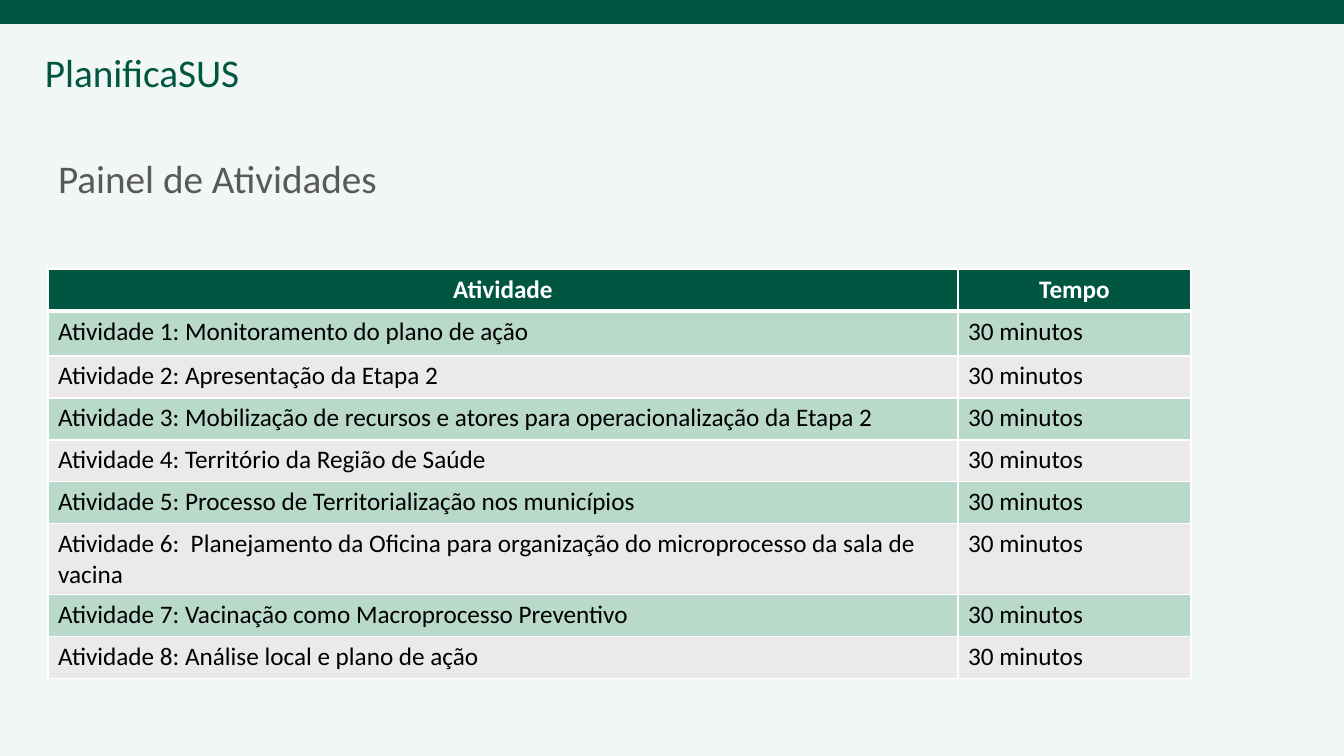
from lxml.etree import SubElement
from pptx import Presentation
from pptx.dml.color import RGBColor
from pptx.enum.shapes import MSO_SHAPE as Shape
from pptx.enum.text import MSO_ANCHOR as Anchor, MSO_AUTO_SIZE as AutoSize, PP_ALIGN as Align
from pptx.oxml.ns import qn
from pptx.util import Pt

GREEN, MINT, GREY = "015641", "B9D9CA", "EBE9EC"
ACTIVITIES = [
    "Atividade 1: Monitoramento do plano de ação",
    "Atividade 2: Apresentação da Etapa 2",
    "Atividade 3: Mobilização de recursos e atores para operacionalização da Etapa 2",
    "Atividade 4: Território da Região de Saúde",
    "Atividade 5: Processo de Territorialização nos municípios",
    "Atividade 6:  Planejamento da Oficina para organização do microprocesso da sala de vacina",
    "Atividade 7: Vacinação como Macroprocesso Preventivo",
    "Atividade 8: Análise local e plano de ação",
]


def px(length):
    return round(length * 914400 / 100.8)


def color(value):
    return RGBColor.from_string(value)


class SlideBuilder:
    """Holds the text style and the current slide, and adds elements to it."""

    def __init__(self, deck, font, background):
        self.font = font
        self.page = deck.slides.add_slide(deck.slide_layouts[5])
        fill = self.page.background.fill
        fill.solid()
        fill.fore_color.rgb = color(background)

    def add_text(self, frame, text, size, ink, bold=False, align=Align.LEFT):
        para = frame.paragraphs[0]
        para.alignment = align
        span = para.add_run()
        span.text = text
        span.font.name = self.font
        span.font.size = Pt(size)
        span.font.bold = bold
        span.font.color.rgb = color(ink)
        return para

    def bar(self, left, top, width, height, fill):
        shape = self.page.shapes.add_shape(Shape.RECTANGLE, *map(px, (left, top, width, height)))
        shape.shadow.inherit = False
        shape.fill.solid()
        shape.fill.fore_color.rgb = color(fill)
        shape.line.fill.background()

    def label(self, left, top, width, height, text, size, ink):
        box = self.page.shapes.add_textbox(*map(px, (left, top, width, height)))
        box.text_frame.word_wrap = False
        box.text_frame.auto_size = AutoSize.SHAPE_TO_FIT_TEXT
        self.add_text(box.text_frame, text, size, ink)

    def title(self, left, top, width, height, text, size, ink):
        title = self.page.shapes.title
        title.left, title.top, title.width, title.height = map(px, (left, top, width, height))
        frame = title.text_frame
        frame.auto_size = AutoSize.NONE
        frame.vertical_anchor = Anchor.MIDDLE
        self.add_text(frame, text, size, ink).line_spacing = 0.9

    def borders(self, cell, ink, top, bottom):
        properties = cell._tc.get_or_add_tcPr()
        sides = {"lnL": 1, "lnR": 1, "lnT": top, "lnB": bottom}
        for index, (side, width) in enumerate(sides.items()):
            line = SubElement(properties, qn("a:" + side), w=str(Pt(width)))
            fill = SubElement(line, qn("a:solidFill"))
            SubElement(fill, qn("a:srgbClr"), val=ink)
            properties.insert(index, line)

    def table(self, left, top, widths, heights, rows, size):
        area = map(px, (left, top, sum(widths), sum(heights)))
        table = self.page.shapes.add_table(len(rows), len(widths), *area).table
        for column, width in zip(table.columns, widths):
            column.width = px(width)
        for number, (row, height, values) in enumerate(zip(table.rows, heights, rows)):
            row.height = px(height)
            header = number == 0
            band = GREEN if header else MINT if number % 2 else GREY
            for cell, value in zip(row.cells, values):
                cell.fill.solid()
                cell.fill.fore_color.rgb = color(band)
                self.borders(cell, "FFFFFF", 3 if number == 1 else 1, 3 if header else 1)
                self.add_text(cell.text_frame, value, size, "FFFFFF" if header else "000000",
                              header, Align.CENTER if header else Align.LEFT)


def main():
    deck = Presentation()
    deck.slide_width, deck.slide_height = px(1344), px(756)
    slide = SlideBuilder(deck, "Calibri", "F1F7F4")
    slide.bar(0, 0, 1344, 24, GREEN)
    slide.label(35, 43, 217, 57, "PlanificaSUS", 28, GREEN)
    slide.title(48, 108, 1108, 146, "Painel de Atividades", 28, "595959")
    rows = [("Atividade", "Tempo")] + [(activity, "30 minutos") for activity in ACTIVITIES]
    slide.table(48, 269, [910, 233], [42, 45] + [42] * 7, rows, 18)
    deck.save("out.pptx")


if __name__ == "__main__":
    main()
